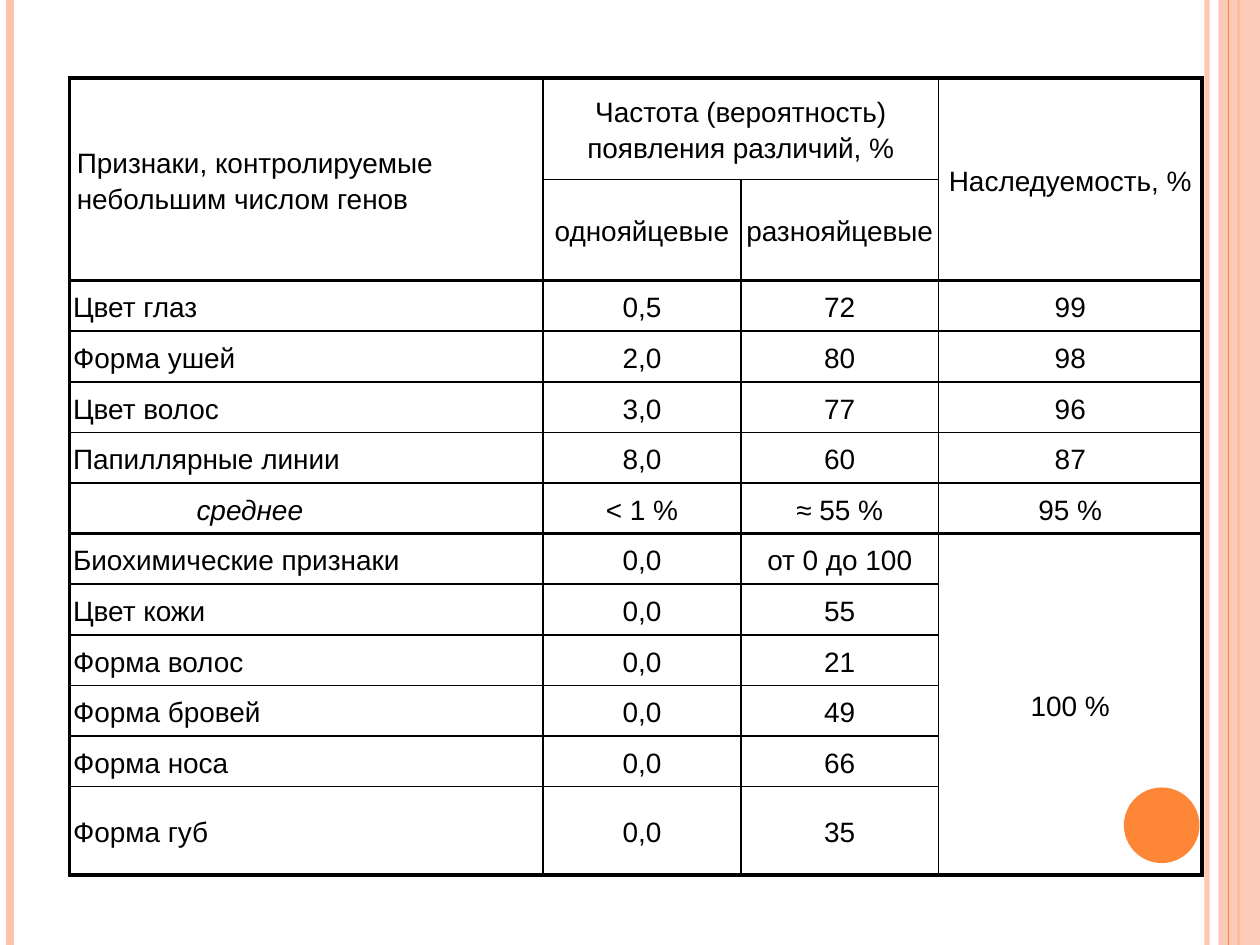
import dataclasses

import pptx
import pptx.dml.color
import pptx.enum.shapes
import pptx.enum.text
import pptx.oxml
import pptx.oxml.ns
import pptx.util

Inches = pptx.util.Inches
Pt = pptx.util.Pt
Align = pptx.enum.text.PP_ALIGN
Shape = pptx.enum.shapes.MSO_SHAPE


@dataclasses.dataclass(frozen=True)
class Theme:
    ink: str = "000000"
    white: str = "FFFFFF"
    peach: str = "FEC3AE"
    orange: str = "FE8637"
    font: str = "Arial"
    size: float = 16
    thin: float = 1
    thick: float = 2.25
    spacing: float = 1.15


def color(code):
    return pptx.dml.color.RGBColor.from_string(code)


def apply(target, values):
    for name, value in values.items():
        setattr(target, name, value)


def fade(part, percent):
    """Set the opacity of the solid colour inside a shape's XML."""
    tint = part._element.spPr.find(".//" + pptx.oxml.ns.qn("a:srgbClr"))
    alpha = tint.makeelement(pptx.oxml.ns.qn("a:alpha"), {"val": str(percent * 1000)})
    tint.append(alpha)


class Painter:
    """Holds the style and the slide being filled."""

    def __init__(self, slide, theme):
        self.slide = slide
        self.theme = theme

    def stripe(self, x, width, code, percent=100):
        """Draw a vertical line down the full slide."""
        line = self.slide.shapes.add_connector(
            pptx.enum.shapes.MSO_CONNECTOR.STRAIGHT,
            Inches(x), 0, Inches(x), Inches(7.5))
        line.line.color.rgb = color(code)
        line.line.width = Pt(width)
        if percent < 100:
            fade(line, percent)
        props = line._element.spPr
        props.append(props.makeelement(pptx.oxml.ns.qn("a:effectLst"), {}))

    def block(self, kind, box, code, percent=100):
        shape = self.slide.shapes.add_shape(kind, *map(Inches, box))
        shape.shadow.inherit = False
        shape.fill.solid()
        shape.fill.fore_color.rgb = color(code)
        shape.line.fill.background()
        if percent < 100:
            fade(shape, percent)

    def label(self, cell, text, align, pad=(0.03, 0), italic=False, indent=0):
        side, top = map(Inches, pad)
        apply(cell, {
            "text": text,
            "vertical_anchor": pptx.enum.text.MSO_ANCHOR.MIDDLE,
            "margin_left": side, "margin_right": side,
            "margin_top": top, "margin_bottom": top,
        })
        para = cell.text_frame.paragraphs[0]
        apply(para, {"alignment": align, "line_spacing": self.theme.spacing})
        if indent:
            para._p.get_or_add_pPr().set("marL", str(Inches(indent)))
        font = para.runs[0].font
        apply(font, {"name": self.theme.font, "size": Pt(self.theme.size),
                     "italic": italic})
        font.color.rgb = color(self.theme.ink)

    def border(self, cell, heavy):
        """Outline a cell; heavy flags left, right, top and bottom."""
        props = cell._tc.get_or_add_tcPr()
        for index, (side, bold) in enumerate(zip("LRTB", heavy)):
            width = Pt(self.theme.thick if bold else self.theme.thin)
            props.insert(index, pptx.oxml.parse_xml(
                f'<a:ln{side} {pptx.oxml.ns.nsdecls("a")} w="{width}">'
                f'<a:solidFill><a:srgbClr val="{self.theme.ink}"/></a:solidFill>'
                f'<a:prstDash val="solid"/></a:ln{side}>'))

    def table(self, box, widths, weights, rows, spans, rules, formats):
        """Build the grid; rules are the row edges drawn thick."""
        grid = self.slide.shapes.add_table(
            len(weights), len(widths), *map(Inches, box)).table
        apply(grid, {"first_row": False, "horz_banding": False})
        for column, width in zip(grid.columns, widths):
            column.width = Inches(width)
        unit = box[3] / sum(weights)
        for row, weight in zip(grid.rows, weights):
            row.height = Inches(unit * weight)
        for first, last in spans:
            grid.cell(*first).merge(grid.cell(*last))
        for r, row in enumerate(rows):
            for c, text in enumerate(row):
                cell = grid.cell(r, c)
                if text:
                    align = Align.CENTER if c else Align.JUSTIFY
                    values = {"align": align, **formats.get((r, c), {})}
                    self.label(cell, text, **values)
                if (r, c) in ((0, 0), (0, 3)):
                    cell.fill.solid()
                    cell.fill.fore_color.rgb = color(self.theme.white)
                else:
                    cell.fill.background()
                high = cell.span_height if cell.is_merge_origin else 1
                self.border(cell, (c == 0, c == len(widths) - 1,
                                   r in rules, r + high in rules))


ROWS = [
    ("Признаки, контролируемые небольшим числом генов",
     "Частота (вероятность) появления различий, %", "", "Наследуемость, %"),
    ("", "однояйцевые", "разнояйцевые", ""),
    ("Цвет глаз", "0,5", "72", "99"),
    ("Форма ушей", "2,0", "80", "98"),
    ("Цвет волос", "3,0", "77", "96"),
    ("Папиллярные линии", "8,0", "60", "87"),
    ("среднее", "< 1 %", "≈ 55 %", "95 %"),
    ("Биохимические признаки", "0,0", "от 0 до 100", "100 %"),
    ("Цвет кожи", "0,0", "55", ""),
    ("Форма волос", "0,0", "21", ""),
    ("Форма бровей", "0,0", "49", ""),
    ("Форма носа", "0,0", "66", ""),
    ("Форма губ", "0,0", "35", ""),
]
SPANS = [((0, 0), (1, 0)), ((0, 1), (0, 2)), ((0, 3), (1, 3)), ((7, 3), (12, 3))]
FORMATS = {
    (0, 0): {"align": Align.LEFT, "pad": (0.06, 0.06)},
    (0, 3): {"pad": (0.06, 0)},
    (6, 0): {"italic": True, "indent": 0.98},
}


def main():
    deck = pptx.Presentation()
    apply(deck, {"slide_width": Inches(10), "slide_height": Inches(7.5)})
    theme = Theme()
    paint = Painter(deck.slides.add_slide(deck.slide_layouts[6]), theme)

    paint.stripe(9.58, 3, theme.peach, 93)
    paint.stripe(0.08, 4.5, theme.peach)
    paint.stripe(9.83, 1.5, theme.orange)
    paint.block(Shape.RECTANGLE, (9.67, 0, 0.33, 7.5), theme.peach, 87)
    paint.stripe(9.75, 0.75, theme.orange)
    paint.block(Shape.OVAL, (8.92, 6.25, 0.6, 0.6), theme.orange)
    paint.table(
        box=(0.55, 0.62, 8.98, 6.33),
        widths=(3.76, 1.57, 1.57, 2.09),
        weights=[2, 2] + [1] * 10 + [1.75],
        rows=ROWS, spans=SPANS, rules={0, 2, 7, 13}, formats=FORMATS)
    deck.save("out.pptx")


if __name__ == "__main__":
    main()
